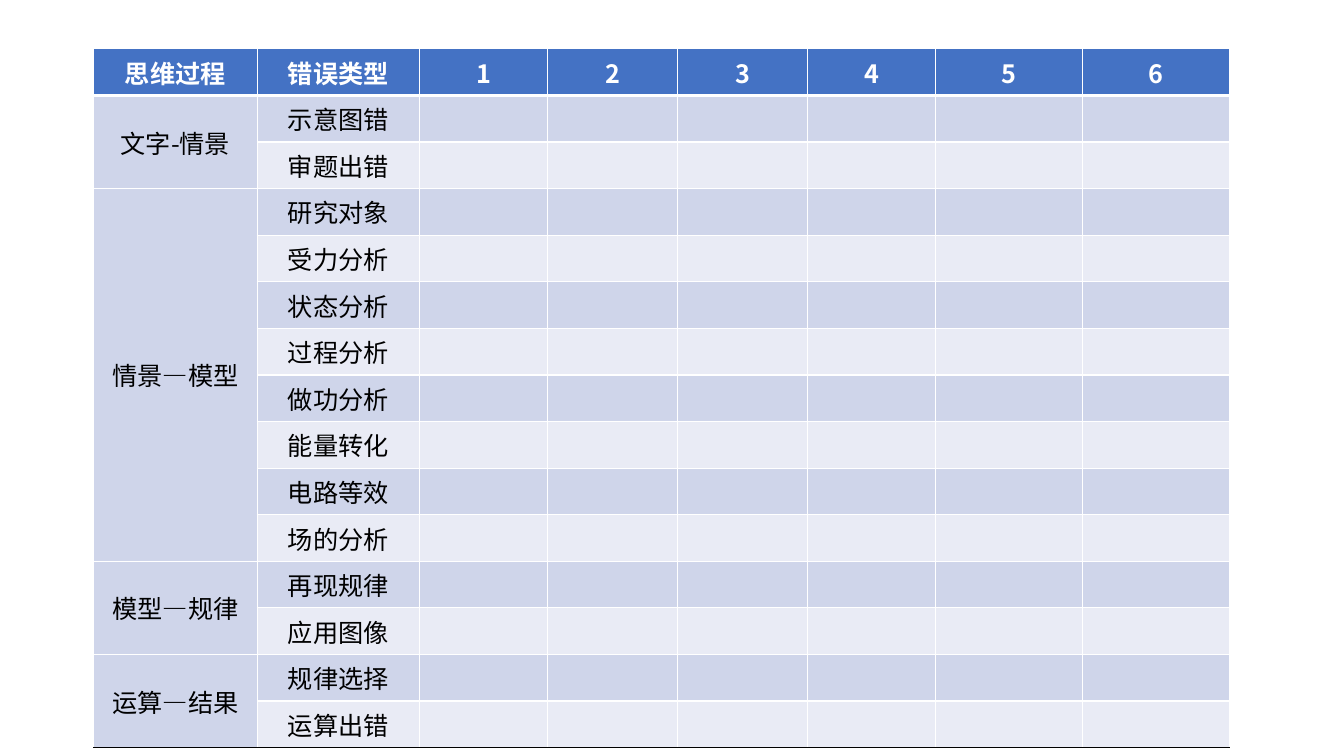
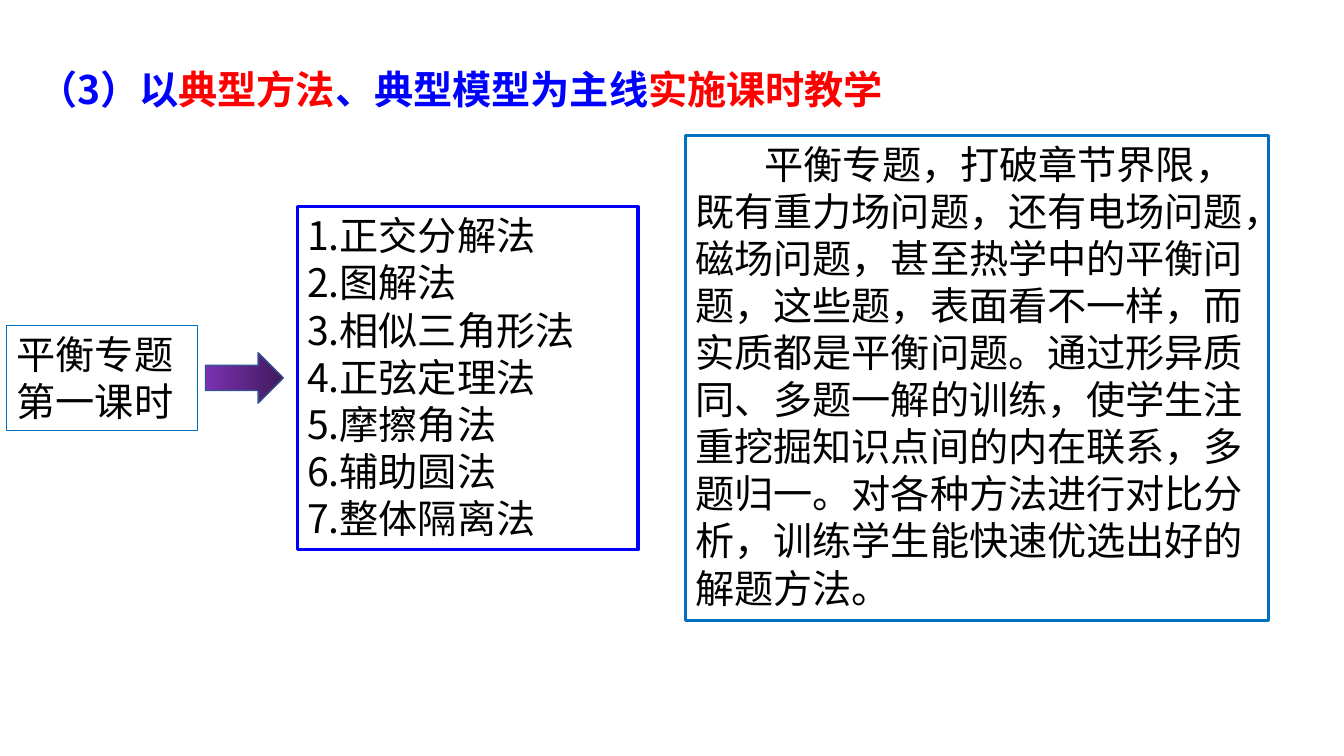
from dataclasses import dataclass
from lxml.etree import SubElement as Sub
from pptx import Presentation
from pptx.dml.color import RGBColor
from pptx.enum.shapes import MSO_SHAPE as Kind
from pptx.enum.text import MSO_ANCHOR as Anchor, PP_ALIGN as Align
from pptx.oxml import parse_xml
from pptx.oxml.ns import nsdecls, qn
from pptx.util import Cm, Pt

Hex = RGBColor.from_string


@dataclass(frozen=True)
class Theme:
    font: str = "Noto Sans CJK SC"
    small: int = 18
    large: int = 28
    black: str = "000000"
    white: str = "FFFFFF"
    head: str = "4472C4"
    dark: str = "CFD5EA"
    light: str = "E9EBF5"
    blue: str = "0000FF"
    red: str = "FF0000"
    frame: str = "0070C0"
    start: str = "7B32B2"
    stop: str = "401A5D"
    edge: str = "325491"


look = Theme()


def style(run, size, color, bold=False):
    font = run.font
    font.name = look.font
    font.size = Pt(size)
    font.bold = bold
    font.color.rgb = Hex(color)
    Sub(run._r.get_or_add_rPr(), qn("a:ea"), typeface=look.font)


def panel(slide, place, text, line=None, width=0):
    box = slide.shapes.add_shape(Kind.RECTANGLE, *map(Cm, place))
    box.shadow.inherit = False
    box.fill.background()
    if line:
        box.line.color.rgb = Hex(line)
        box.line.width = Pt(width)
    else:
        box.line.fill.background()
    frame = box.text_frame
    frame.word_wrap = True
    frame.vertical_anchor = Anchor.TOP
    frame.text = text
    for para in frame.paragraphs:
        para.alignment = Align.LEFT
        for run in para.runs:
            style(run, look.large, look.black)
    return frame


deck = Presentation()
deck.slide_width = Cm(33.87)
deck.slide_height = Cm(19.05)
blank = deck.slide_layouts[6]

slide = deck.slides.add_slide(blank)
heads = ["思维过程", "错误类型", "1", "2", "3", "4", "5", "6"]
groups = [
    ("文字-情景", ["示意图错", "审题出错"]),
    ("情景—模型", ["研究对象", "受力分析", "状态分析", "过程分析",
               "做功分析", "能量转化", "电路等效", "场的分析"]),
    ("模型—规律", ["再现规律", "应用图像"]),
    ("运算—结果", ["规律选择", "运算出错"]),
]
wide = [4.12, 4.09, 3.23, 3.28, 3.27, 3.23, 3.7, 3.7]
high = 1.06
count = 1 + sum(len(kinds) for _, kinds in groups)
grid = slide.shapes.add_table(
    count, len(wide), Cm(2.36), Cm(1.23), Cm(sum(wide)), Cm(high * count)
).table
for col, size in zip(grid.columns, wide):
    col.width = Cm(size)
for row in grid.rows:
    row.height = Cm(high)

for col, text in enumerate(heads):
    grid.cell(0, col).text = text
top = 1
for name, kinds in groups:
    grid.cell(top, 0).text = name
    for step, kind in enumerate(kinds):
        grid.cell(top + step, 1).text = kind
    grid.cell(top, 0).merge(grid.cell(top + len(kinds) - 1, 0))
    top += len(kinds)

for row in range(count):
    for col in range(len(wide)):
        cell = grid.cell(row, col)
        cell.vertical_anchor = Anchor.MIDDLE
        cell.fill.solid()
        if row == 0:
            fill = look.head
        else:
            fill = look.dark if col == 0 or row % 2 else look.light
        cell.fill.fore_color.rgb = Hex(fill)
        for para in cell.text_frame.paragraphs:
            para.alignment = Align.CENTER
            para.font.size = Pt(look.small)
            for run in para.runs:
                style(run, look.small, look.black if row else look.white, row == 0)
        end = row + (cell.span_height if cell.is_merge_origin else 1)
        base = look.black if end == count else look.white
        sides = [
            ("L", look.white, 1),
            ("R", look.white, 1),
            ("T", look.white, 3 if row == 1 else 1),
            ("B", base, 3 if row == 0 else 1),
        ]
        for spot, (side, color, width) in enumerate(sides):
            cell._tc.get_or_add_tcPr().insert(spot, parse_xml(
                f'<a:ln{side} {nsdecls("a")} w="{Pt(width)}"><a:solidFill>'
                f'<a:srgbClr val="{color}"/></a:solidFill></a:ln{side}>'
            ))

slide = deck.slides.add_slide(blank)
title = panel(slide, (0.71, 1.52, 28.14, 1.45), "").paragraphs[0]
for text, color in [
    ("（3）以", look.blue),
    ("典型方法", look.red),
    ("、典型模型为主线", look.blue),
    ("实施课时教学", look.red),
]:
    run = title.add_run()
    run.text = text
    style(run, look.large, color, True)

arrow = slide.shapes.add_shape(Kind.RIGHT_ARROW, Cm(5.18), Cm(8.89), Cm(1.96), Cm(1.27))
arrow.shadow.inherit = False
arrow.fill.gradient()
arrow.fill.gradient_angle = 0
for stop, color, spot in zip(arrow.fill.gradient_stops, (look.start, look.stop), (0, 1)):
    stop.color.rgb = Hex(color)
    stop.position = spot
arrow.line.color.rgb = Hex(look.edge)
arrow.line.width = Pt(1)

ways = ["正交分解法", "图解法", "相似三角形法", "正弦定理法", "摩擦角法", "辅助圆法", "整体隔离法"]
text = "\n".join(f"{rank}.{way}" for rank, way in enumerate(ways, 1))
panel(slide, (7.49, 5.21, 8.59, 8.64), text, look.blue, 2.25)
panel(slide, (0.17, 8.2, 4.8, 2.64), "平衡专题\n第一课时", look.frame, 0.75)
body = panel(
    slide, (17.27, 3.41, 14.7, 12.22),
    "平衡专题，打破章节界限，既有重力场问题，还有电场问题，磁场问题，"
    "甚至热学中的平衡问题，这些题，表面看不一样，而实质都是平衡问题。"
    "通过形异质同、多题一解的训练，使学生注重挖掘知识点间的内在联系，多题归一。"
    "对各种方法进行对比分析，训练学生能快速优选出好的解题方法。",
    look.frame, 2.25,
)
body.paragraphs[0]._p.get_or_add_pPr().set("indent", str(Cm(1.75)))

deck.save("out.pptx")
